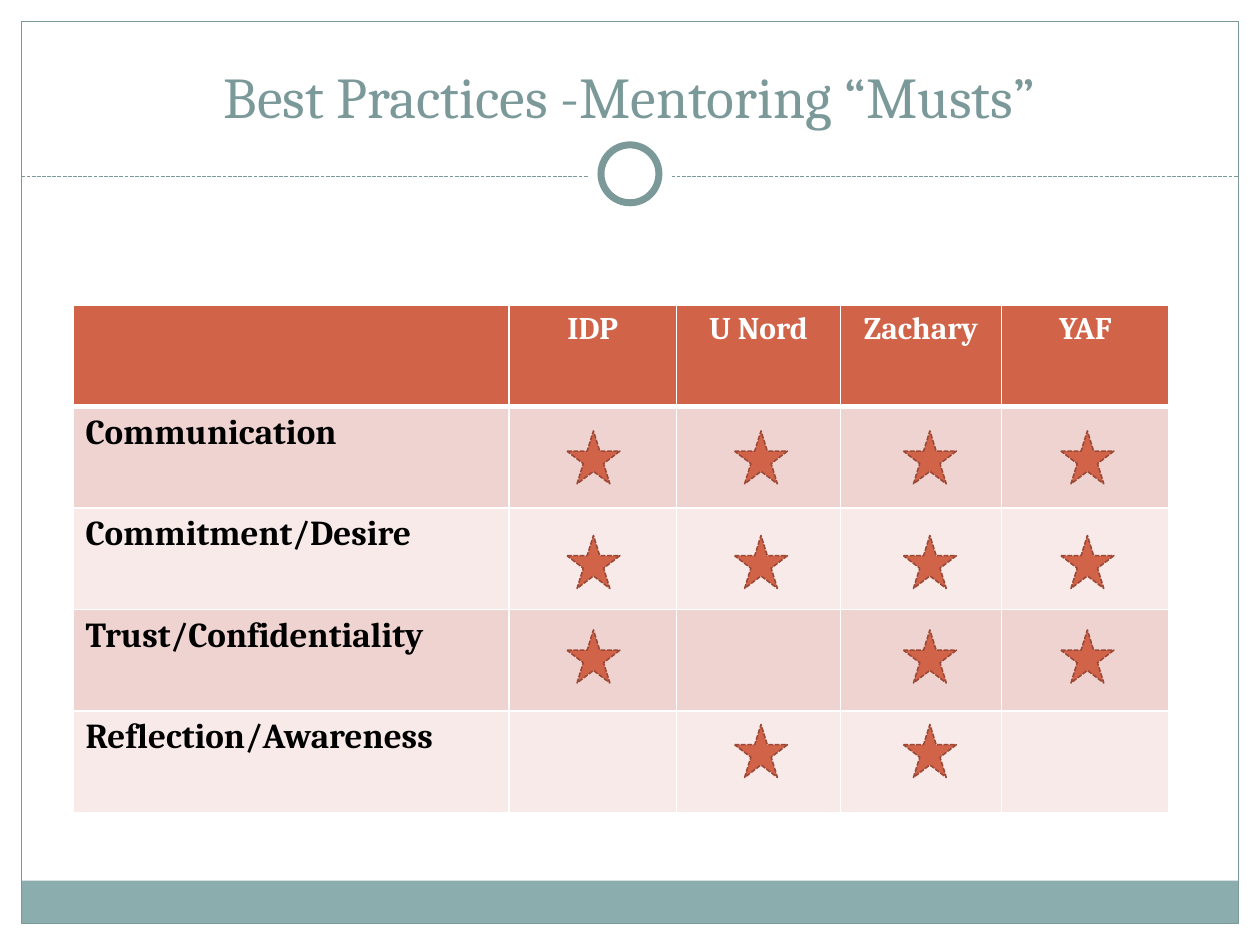
from lxml import etree
from pptx import Presentation
from pptx.dml.color import RGBColor
from pptx.enum.dml import MSO_LINE_DASH_STYLE as Dash
from pptx.enum.shapes import MSO_CONNECTOR, MSO_SHAPE as Shape
from pptx.enum.text import MSO_ANCHOR, PP_ALIGN
from pptx.oxml.ns import qn
from pptx.util import Inches, Pt

WIDTH, HEIGHT = 10, 7.5
FONT = "Cambria"
TEAL, BAND, WHITE, BLACK = "7C999A", "8CADAE", "FFFFFF", "000000"
ORANGE, STAR_EDGE = "D16349", "9B4936"
STRIPES = ["EED3D0", "F7EAE9"]

# Table grid
TABLE_LEFT, TABLE_TOP, ROW_HEIGHT = 0.58, 2.42, 0.806
COLUMNS = [3.46, 1.33, 1.30, 1.28, 1.33]
HEADINGS = ["", "IDP", "U Nord", "Zachary", "YAF"]

# Each practice: its star row's top and the columns that have a star
PRACTICES = [
    ("Communication", 3.42, [1, 2, 3, 4]),
    ("Commitment/Desire", 4.25, [1, 2, 3, 4]),
    ("Trust/Confidentiality", 5.00, [1, 3, 4]),
    ("Reflection/Awareness", 5.75, [2, 3]),
]
STAR_LEFT = {1: 4.5, 2: 5.83, 3: 7.17, 4: 8.42}
STAR_SIZE = 0.42


def color(hex_text):
    return RGBColor.from_string(hex_text)


def set_line(line, hex_text, width, dash=None):
    line.color.rgb = color(hex_text)
    line.width = Pt(width)
    if dash:
        line.dash_style = dash


def add_shape(page, kind, box, fill=None, line=None):
    shape = page.shapes.add_shape(kind, *map(Inches, box))
    shape.shadow.inherit = False
    if fill:
        shape.fill.solid()
        shape.fill.fore_color.rgb = color(fill)
    else:
        shape.fill.background()
    if line:
        set_line(shape.line, *line)
    else:
        shape.line.fill.background()


def add_circle(page, center_y, size, line=None):
    box = ((WIDTH - size) / 2, center_y - size / 2, size, size)
    add_shape(page, Shape.OVAL, box, WHITE, line)


def add_rule(page, left, right, y):
    rule = page.shapes.add_connector(
        MSO_CONNECTOR.STRAIGHT, *map(Inches, (left, y, right, y)))
    set_line(rule.line, TEAL, 0.75, Dash.SQUARE_DOT)
    etree.SubElement(rule.element.spPr, qn("a:effectLst"))


def write(para, text, align, size, hex_text, bold):
    para.alignment = align
    span = para.add_run()
    span.text = text
    for name, value in {"name": FONT, "size": Pt(size), "bold": bold}.items():
        setattr(span.font, name, value)
    span.font.color.rgb = color(hex_text)


def add_borders(cell, widths):
    properties = cell._tc.get_or_add_tcPr()
    for index, (side, width) in enumerate(widths.items()):
        border = etree.Element(qn(f"a:ln{side}"), w=str(Pt(width)))
        fill = etree.SubElement(border, qn("a:solidFill"))
        etree.SubElement(fill, qn("a:srgbClr"), val=WHITE)
        properties.insert(index, border)


def add_frame(page):
    margin = 0.17
    inner = WIDTH - 2 * margin
    add_shape(page, Shape.RECTANGLE, (margin, 6.99, inner, 0.34), BAND)
    add_shape(page, Shape.RECTANGLE,
              (margin, margin, inner, HEIGHT - 2 * margin), line=(TEAL, 0.75))
    add_rule(page, margin, WIDTH - margin, 1.4)
    add_circle(page, 1.38, 0.67)
    add_circle(page, 1.38, 0.46, (TEAL, 4))


def add_title(page, text):
    title = page.shapes.title
    place = {"left": 0.33, "top": 0.25, "width": 9.33, "height": 0.83}
    for name, value in place.items():
        setattr(title, name, Inches(value))
    title.text_frame.vertical_anchor = MSO_ANCHOR.BOTTOM
    write(title.text_frame.paragraphs[0], text, PP_ALIGN.CENTER, 33, TEAL, False)


def add_practice_table(page):
    rows = [HEADINGS] + [[name, "", "", "", ""] for name, *_ in PRACTICES]
    box = (TABLE_LEFT, TABLE_TOP, sum(COLUMNS), ROW_HEIGHT * len(rows))
    table = page.shapes.add_table(
        len(rows), len(COLUMNS), *map(Inches, box)).table
    for column, width in zip(table.columns, COLUMNS):
        column.width = Inches(width)
    for r, texts in enumerate(rows):
        table.rows[r].height = Inches(ROW_HEIGHT)
        for c, text in enumerate(texts):
            cell = table.cell(r, c)
            cell.fill.solid()
            cell.fill.fore_color.rgb = color(STRIPES[(r - 1) % 2] if r else ORANGE)
            # The heading row is set off by a thicker line
            add_borders(cell, {"L": 1, "R": 1, "T": 3 if r == 1 else 1,
                               "B": 1 if r else 3})
            if text:
                style = ((PP_ALIGN.LEFT, 20, BLACK) if r
                         else (PP_ALIGN.CENTER, 18, WHITE))
                write(cell.text_frame.paragraphs[0], text, *style, True)


def add_stars(page):
    for _, top, columns in PRACTICES:
        for column in columns:
            add_shape(page, Shape.STAR_5_POINT,
                      (STAR_LEFT[column], top, STAR_SIZE, STAR_SIZE),
                      ORANGE, (STAR_EDGE, 0.9, Dash.SQUARE_DOT))


def main():
    deck = Presentation()
    deck.slide_width, deck.slide_height = Inches(WIDTH), Inches(HEIGHT)
    page = deck.slides.add_slide(deck.slide_layouts[5])
    add_frame(page)
    add_title(page, "Best Practices -Mentoring “Musts”")
    add_practice_table(page)
    add_stars(page)
    deck.save("out.pptx")


if __name__ == "__main__":
    main()
